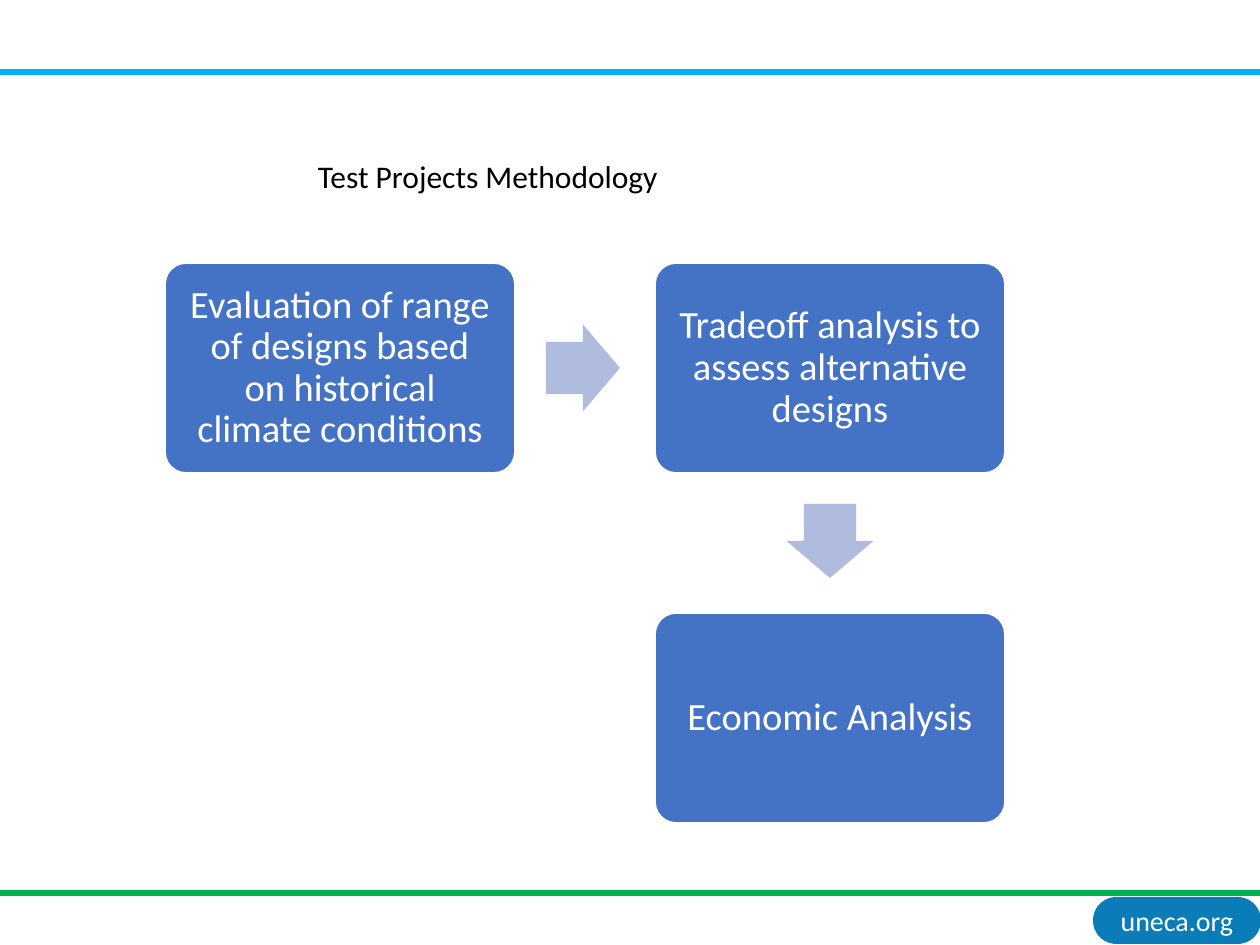
from pptx import Presentation
from pptx.dml.color import RGBColor
from pptx.enum.shapes import MSO_SHAPE
from pptx.enum.text import MSO_ANCHOR, PP_ALIGN
from pptx.util import Emu, Pt

EMU_PER_PX = 914400 // 126
WHITE = RGBColor(0xFF, 0xFF, 0xFF)
BLACK = RGBColor(0x00, 0x00, 0x00)
SKY = RGBColor(0x00, 0xB0, 0xF0)
GREEN = RGBColor(0x00, 0xB0, 0x50)
BADGE_BLUE = RGBColor(0x0A, 0x7C, 0xB8)
STEP_BLUE = RGBColor(0x44, 0x72, 0xC4)
ARROW_BLUE = RGBColor(0xB0, 0xBC, 0xDE)

TITLE = "Test Projects Methodology"
SITE = "uneca.org"
# Text, column, row
STEPS = [
    ("Evaluation of range of designs based on historical climate conditions", 0, 0),
    ("Tradeoff analysis to assess alternative designs", 1, 0),
    ("Economic Analysis", 1, 1),
]
RULES = [(69, SKY), (890, GREEN)]

SLIDE_W, SLIDE_H = 1260, 945
RULE_H = 6
STEP_W, STEP_H = 350, 210
FIRST_X, FIRST_Y = 340, 368  # centre of the first step
PITCH_X, PITCH_Y = 490, 350
ARROW_W, ARROW_H = 74, 87
ARROW_SHIFT = 2  # arrows sit slightly before the middle of the gap


def px(value):
    return Emu(round(value * EMU_PER_PX))


def add_shape(slide, kind, box, fill, outline=None, adjustments=()):
    shape = slide.shapes.add_shape(kind, *map(px, box))
    shape.shadow.inherit = False
    shape.fill.solid()
    shape.fill.fore_color.rgb = fill
    if outline is None:
        shape.line.fill.background()
    else:
        shape.line.color.rgb = outline
        shape.line.width = Pt(1)
    for index, value in enumerate(adjustments):
        shape.adjustments[index] = value
    return shape


def write(shape, text, size, color=WHITE, align=PP_ALIGN.CENTER,
          anchor=MSO_ANCHOR.MIDDLE, insets=(6, 6), spacing=1.0, wrap=True):
    """Fill a shape with one paragraph; insets are (horizontal, vertical) px."""
    frame = shape.text_frame
    frame.word_wrap = wrap
    frame.vertical_anchor = anchor
    frame.margin_left = frame.margin_right = px(insets[0])
    frame.margin_top = frame.margin_bottom = px(insets[1])
    paragraph = frame.paragraphs[0]
    paragraph.alignment = align
    paragraph.line_spacing = spacing
    run = paragraph.add_run()
    run.text = text
    run.font.name = "Calibri"
    run.font.size = Pt(size)
    run.font.color.rgb = color


def add_arrow(slide, start, end):
    """Place an arrow between two step centres, turned towards the second."""
    vertical = start[0] == end[0]
    x, y = ((a + b) / 2 for a, b in zip(start, end))
    if vertical:
        y -= ARROW_SHIFT
    else:
        x -= ARROW_SHIFT
    box = (x - ARROW_W / 2, y - ARROW_H / 2, ARROW_W, ARROW_H)
    arrow = add_shape(slide, MSO_SHAPE.RIGHT_ARROW, box, ARROW_BLUE,
                      adjustments=(0.6, 0.5))
    arrow.rotation = 90 if vertical else 0


def main():
    presentation = Presentation()
    presentation.slide_width = px(SLIDE_W)
    presentation.slide_height = px(SLIDE_H)
    slide = presentation.slides.add_slide(presentation.slide_layouts[6])

    badge = add_shape(slide, MSO_SHAPE.ROUNDED_RECTANGLE, (1093, 897, 168, 47),
                      BADGE_BLUE, adjustments=(0.5,))
    write(badge, SITE, 16)
    for top, color in RULES:
        add_shape(slide, MSO_SHAPE.RECTANGLE, (0, top, SLIDE_W, RULE_H), color)

    title = slide.shapes.add_textbox(*map(px, (305, 151, 369, 50)))
    write(title, TITLE, 18, color=BLACK, align=PP_ALIGN.LEFT,
          anchor=MSO_ANCHOR.TOP, insets=(13, 6), wrap=False)

    centres = [(FIRST_X + column * PITCH_X, FIRST_Y + row * PITCH_Y)
               for _, column, row in STEPS]
    for (text, _, _), (x, y) in zip(STEPS, centres):
        box = (x - STEP_W / 2, y - STEP_H / 2, STEP_W, STEP_H)
        step = add_shape(slide, MSO_SHAPE.ROUNDED_RECTANGLE, box, STEP_BLUE,
                         outline=WHITE, adjustments=(0.1,))
        write(step, text, 22, insets=(15, 15), spacing=0.9)
    for start, end in zip(centres, centres[1:]):
        add_arrow(slide, start, end)

    presentation.save("out.pptx")


if __name__ == "__main__":
    main()
